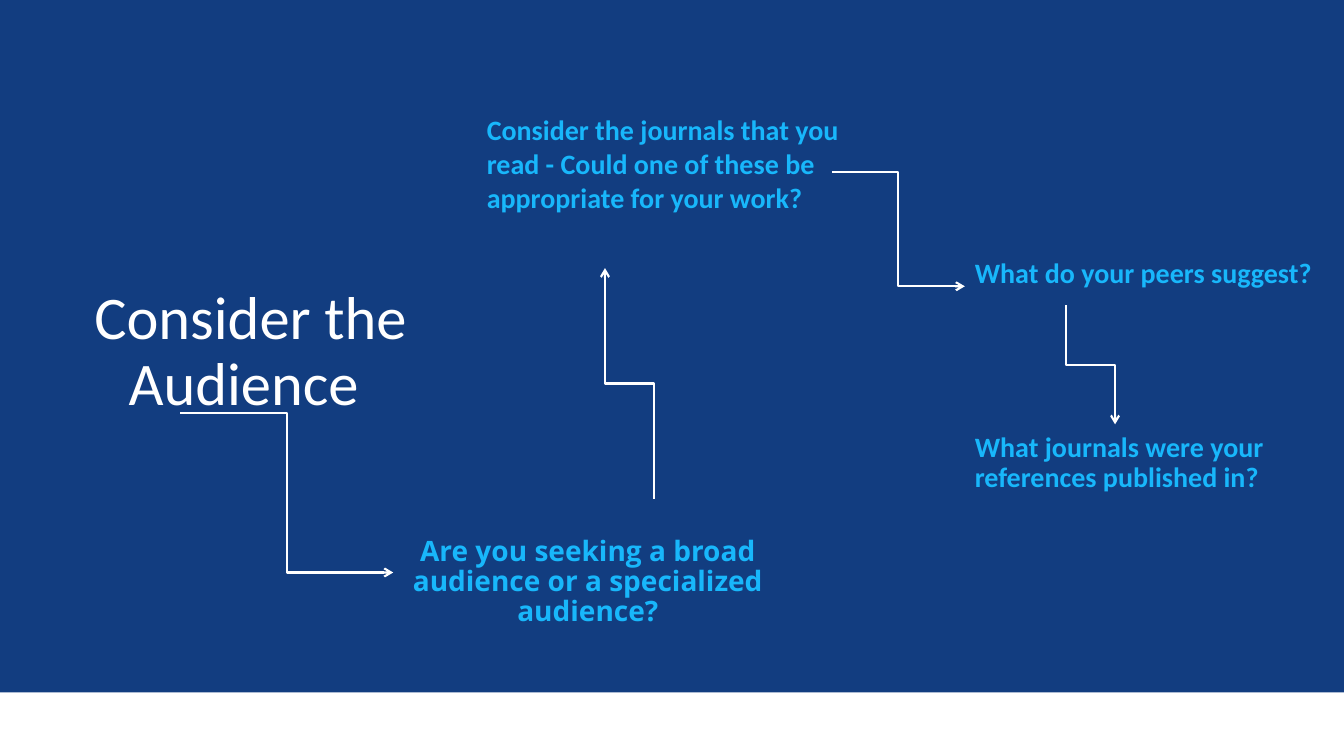
from pptx import Presentation
from pptx.dml.color import RGBColor
from pptx.enum.shapes import MSO_CONNECTOR, MSO_SHAPE
from pptx.enum.text import MSO_ANCHOR, PP_ALIGN
from pptx.oxml.ns import qn
from pptx.oxml.xmlchemy import OxmlElement
from pptx.util import Inches, Pt

WIDTH, HEIGHT = Inches(13.33), Inches(7.5)
NAVY, SKY, WHITE = "123D80", "18B7FB", "FFFFFF"


def color(value):
    return RGBColor.from_string(value)


def across(percent):
    """Length as a percentage of the slide's width."""
    return round(WIDTH * percent / 100)


def down(percent):
    """Length as a percentage of the slide's height."""
    return round(HEIGHT * percent / 100)


def add_panel(slide, height):
    panel = slide.shapes.add_shape(MSO_SHAPE.RECTANGLE, 0, 0, WIDTH, down(height))
    panel.shadow.inherit = False
    panel.fill.solid()
    panel.fill.fore_color.rgb = color(NAVY)
    panel.line.fill.background()


def add_text(slide, area, paragraphs, size=20, font="Calibri", ink=SKY, bold=True,
             align=PP_ALIGN.LEFT, line_spacing=0.9, gap=0):
    left, top, width, height = area
    box = slide.shapes.add_textbox(across(left), down(top), across(width), down(height))
    frame = box.text_frame
    frame.word_wrap = True
    for index, text in enumerate(paragraphs):
        paragraph = frame.add_paragraph() if index else frame.paragraphs[0]
        paragraph.alignment = align
        paragraph.line_spacing = line_spacing
        paragraph.space_before = Pt(gap if index else 0)
        run = paragraph.add_run()
        run.text = text
        run.font.name = font
        run.font.size = Pt(size)
        run.font.bold = bold
        run.font.color.rgb = color(ink)
    return frame


def add_elbow_arrow(slide, start, end, vertical=False):
    x1, y1 = across(start[0]), down(start[1])
    x2, y2 = across(end[0]), down(end[1])
    if vertical:
        # An elbow leaves sideways, so lay it flat about its centre and turn it
        center_x, center_y = (x1 + x2) // 2, (y1 + y2) // 2
        half_x, half_y = (y1 - y2) // 2, (x2 - x1) // 2
        x1, y1 = center_x - half_x, center_y - half_y
        x2, y2 = center_x + half_x, center_y + half_y
    connector = slide.shapes.add_connector(MSO_CONNECTOR.ELBOW, x1, y1, x2, y2)
    connector.line.color.rgb = color(WHITE)
    connector.line.width = Pt(1.5)
    properties = connector._element.spPr
    if vertical:
        properties.find(qn("a:xfrm")).set("rot", str(270 * 60000))
    arrowhead = OxmlElement("a:tailEnd")
    arrowhead.set("type", "arrow")
    properties.find(qn("a:ln")).append(arrowhead)
    properties.append(OxmlElement("a:effectLst"))


def main():
    presentation = Presentation()
    presentation.slide_width, presentation.slide_height = WIDTH, HEIGHT
    slide = presentation.slides.add_slide(presentation.slide_layouts[6])
    add_panel(slide, 91.6)

    # Title
    title = add_text(slide, (1.8, 40.4, 33.68, 12.53), ["Consider the Audience "],
                     size=43.2, ink=WHITE, bold=False, align=PP_ALIGN.CENTER)
    title.vertical_anchor = MSO_ANCHOR.MIDDLE
    title.margin_left = title.margin_right = 0

    # Questions
    add_text(slide, (29.26, 70.4, 28.96, 10.53),
             ["Are you seeking a broad audience or a specialized audience?"],
             font="Open Sans", align=PP_ALIGN.CENTER)
    add_text(slide, (71.79, 33.6, 27.23, 27.6),
             ["What do your peers suggest?",
              "What journals were your references published in?"], gap=103)
    add_text(slide, (35.48, 14.27, 31.5, 19.33),
             ["Consider the journals that you read - Could one of these be "
              "appropriate for your work?"], line_spacing=1)

    # Path from the title through the questions
    add_elbow_arrow(slide, (13.43, 54.67), (29.26, 75.73))
    add_elbow_arrow(slide, (48.69, 66), (45.01, 35.47), vertical=True)
    add_elbow_arrow(slide, (61.89, 22.8), (71.79, 37.87))
    add_elbow_arrow(slide, (79.29, 40.4), (82.97, 56.13), vertical=True)

    presentation.save("out.pptx")


if __name__ == "__main__":
    main()
